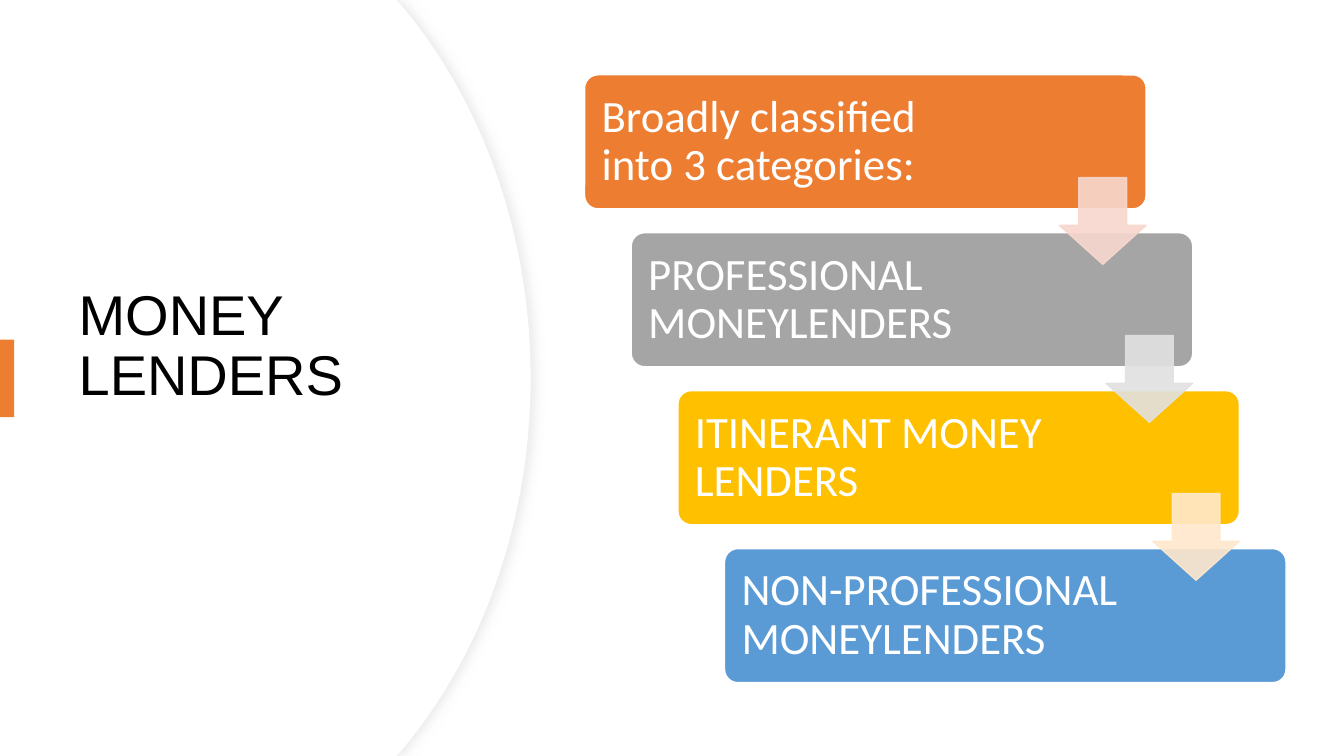
import pptx
import pptx.dml.color
import pptx.enum.shapes
import pptx.enum.text
import pptx.oxml
import pptx.oxml.ns
import pptx.util

SHAPES = pptx.enum.shapes.MSO_SHAPE
CARDS = [
    ("Broadly classified into 3 categories:", "ED7D31"),
    ("PROFESSIONAL MONEYLENDERS", "A5A5A5"),
    ("ITINERANT MONEY LENDERS", "FFC000"),
    ("NON-PROFESSIONAL MONEYLENDERS", "5B9BD5"),
]
ARROW_COLOURS = ["F8D7CE", "E1E1E1", "FFE8CC"]

# Percentages of the slide's width and height
CARD_LEFT, CARD_TOP = 43.5, 9.9
CARD_WIDTH, CARD_HEIGHT = 41.78, 17.73
STEP_RIGHT, STEP_DOWN = 3.47, 20.89
ARROW_WIDTH, ARROW_HEIGHT = 6.45, 11.47
ARROW_DROP = 13.6
PANEL_WIDTH = 39.52
UPPER_CURVE = [(30.08, 1.07), (35.93, 13.6), (39.52, 30.93), (39.52, 50)]
CURVE_STEPS = 30


def colour(hex_string):
    return pptx.dml.color.RGBColor.from_string(hex_string)


def bezier_point(controls, t):
    weights = ((1 - t) ** 3, 3 * t * (1 - t) ** 2, 3 * t ** 2 * (1 - t), t ** 3)
    return tuple(sum(w * point[axis] for w, point in zip(weights, controls))
                 for axis in (0, 1))


def panel_outline(width):
    """Points of a panel whose right edge bulges symmetrically about mid-height."""
    upper = [(29.55, 0)]
    upper += [bezier_point(UPPER_CURVE, i / CURVE_STEPS) for i in range(CURVE_STEPS + 1)]
    lower = [(x, 100 - y) for x, y in reversed(upper[:-1])]
    scale = width / PANEL_WIDTH
    return [(0, 0)] + [(x * scale, y) for x, y in upper + lower] + [(0, 100)]


class SlideBuilder:
    """Draws styled elements placed in percentages of the slide's size."""

    def __init__(self, presentation):
        self.presentation = presentation
        self.slide = presentation.slides.add_slide(presentation.slide_layouts[5])
        self.shapes = self.slide.shapes

    def x(self, percent):
        return round(self.presentation.slide_width * percent / 100)

    def y(self, percent):
        return round(self.presentation.slide_height * percent / 100)

    def box(self, left, top, width, height):
        return self.x(left), self.y(top), self.x(width), self.y(height)

    def paint(self, shape, fill, line=None, line_width=1):
        shape.shadow.inherit = False
        shape.fill.solid()
        shape.fill.fore_color.rgb = colour(fill)
        if line:
            shape.line.color.rgb = colour(line)
            shape.line.width = pptx.util.Pt(line_width)
        else:
            shape.line.fill.background()

    def preset(self, kind, box, fill, line=None, adjustments=()):
        shape = self.shapes.add_shape(kind, *self.box(*box))
        for index, value in enumerate(adjustments):
            shape.adjustments[index] = value
        self.paint(shape, fill, line)
        return shape

    def set_text(self, shape, text, size, font, text_colour):
        frame = shape.text_frame
        frame.text = text
        frame.word_wrap = True
        frame.auto_size = pptx.enum.text.MSO_AUTO_SIZE.NONE
        frame.vertical_anchor = pptx.enum.text.MSO_ANCHOR.MIDDLE
        paragraph = frame.paragraphs[0]
        paragraph.alignment = pptx.enum.text.PP_ALIGN.LEFT
        paragraph.line_spacing = 0.9
        for run in paragraph.runs:
            run.font.size = pptx.util.Pt(size)
            run.font.name = font
            run.font.color.rgb = colour(text_colour)

    def panel(self, width, line=None):
        points = [(self.x(x), self.y(y)) for x, y in panel_outline(width)]
        builder = self.shapes.build_freeform(*points[0])
        builder.add_line_segments(points[1:])
        shape = builder.convert_to_shape()
        self.paint(shape, "FFFFFF", line, 0.75)
        return shape

    def add_soft_shadow(self, shape):
        effects = shape._element.spPr.find(pptx.oxml.ns.qn("a:effectLst"))
        effects.append(pptx.oxml.parse_xml(
            f'<a:outerShdw {pptx.oxml.ns.nsdecls("a")} blurRad="{pptx.util.Pt(7)}" '
            f'dist="{pptx.util.Pt(3)}" dir="0" algn="l" rotWithShape="0">'
            '<a:srgbClr val="D9D9D9"><a:alpha val="50000"/></a:srgbClr></a:outerShdw>'))

    def title(self, text):
        title = self.shapes.title
        title.left, title.top, title.width, title.height = self.box(5.1, 16.93, 29.55, 66)
        self.set_text(title, text, 40, "Arial", "000000")
        title.text_frame.margin_bottom = pptx.util.Inches(0.65)
        self.shapes._spTree.append(title._element)  # bring in front of the panels

    def card(self, index, text, fill):
        box = (CARD_LEFT + index * STEP_RIGHT, CARD_TOP + index * STEP_DOWN,
               CARD_WIDTH, CARD_HEIGHT)
        shape = self.preset(SHAPES.ROUNDED_RECTANGLE, box, fill, "FFFFFF", [0.1])
        self.set_text(shape, text, 32, "Calibri", "FFFFFF")
        shape.text_frame.margin_left = pptx.util.Inches(0.13)
        shape.text_frame.margin_right = pptx.util.Inches(1.56)

    def arrow(self, index, fill):
        left = CARD_LEFT + index * STEP_RIGHT + CARD_WIDTH - ARROW_WIDTH
        top = CARD_TOP + index * STEP_DOWN + ARROW_DROP
        shape = self.preset(SHAPES.DOWN_ARROW, (left, top, ARROW_WIDTH, ARROW_HEIGHT),
                            fill, fill, [0.55, 0.45])
        for element in shape._element.spPr.iter(pptx.oxml.ns.qn("a:srgbClr")):
            element.append(pptx.oxml.parse_xml(
                f'<a:alpha {pptx.oxml.ns.nsdecls("a")} val="90000"/>'))


def main():
    presentation = pptx.Presentation()
    presentation.slide_width = pptx.util.Inches(13.33)
    presentation.slide_height = pptx.util.Inches(7.5)
    builder = SlideBuilder(presentation)
    builder.add_soft_shadow(builder.panel(PANEL_WIDTH, "EFEFEF"))
    builder.panel(PANEL_WIDTH - 0.07)
    builder.title("MONEY LENDERS")
    builder.preset(SHAPES.RECTANGLE, (0, 44.93, 1.05, 10.27), "ED7D31")
    for index, (text, fill) in enumerate(CARDS):
        builder.card(index, text, fill)
    for index, fill in enumerate(ARROW_COLOURS):
        builder.arrow(index, fill)
    presentation.save("out.pptx")


if __name__ == "__main__":
    main()
